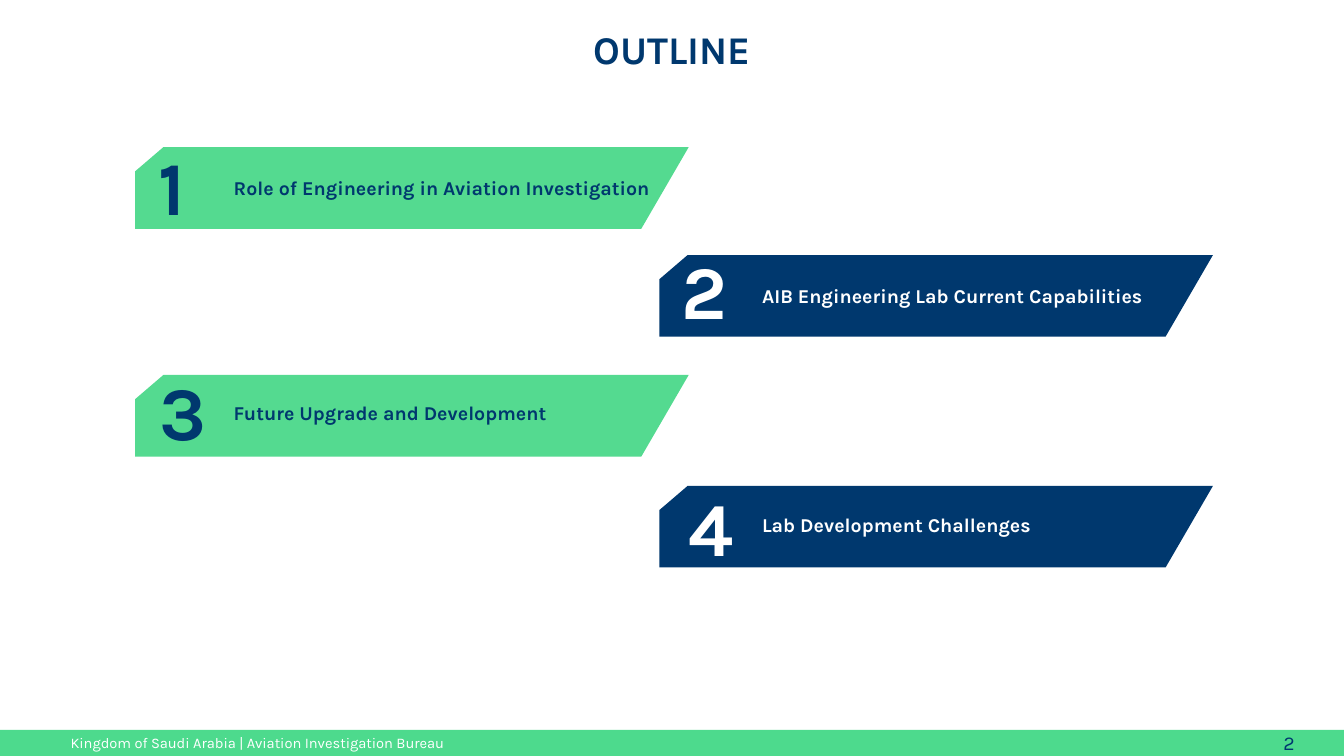
import pptx
import pptx.util
import pptx.dml.color
import pptx.enum.shapes
import pptx.enum.text
import lxml.etree
from pptx.util import Inches

RGBColor = pptx.dml.color.RGBColor
NAVY = RGBColor(0x00, 0x38, 0x6E)
PAGE_NAVY = RGBColor(0x00, 0x37, 0x70)
GREEN = RGBColor(0x54, 0xDA, 0x90)
FOOTER_GREEN = RGBColor(0x4D, 0xDA, 0x8D)
WHITE = RGBColor(0xFF, 0xFF, 0xFF)
FONT = "Karla"
ALIGN = pptx.enum.text.PP_ALIGN
ANCHOR = pptx.enum.text.MSO_ANCHOR

TITLE = "OUTLINE"
FOOTER = "Kingdom of Saudi Arabia | Aviation Investigation Bureau"
PAGE_NUMBER = "2"
COLUMNS = [
    {"left": 1.34, "label_left": 2.22, "fill": GREEN, "ink": NAVY},
    {"left": 6.54, "label_left": 7.46, "fill": NAVY, "ink": WHITE},
]
TOPICS = [
    ("Role of Engineering in Aviation Investigation", 1.46, 1.72, (1.47, 1.44)),
    ("AIB Engineering Lab Current Capabilities", 2.53, 2.79, (6.66, 2.47)),
    ("Future Upgrade and Development", 3.72, 3.95, (1.48, 3.67)),
    ("Lab Development Challenges", 4.82, 5.07, (6.73, 4.82)),
]
BANNER_OUTLINE = [(0.28, 0), (0, 0.24), (0, 0.81), (5.02, 0.81), (5.49, 0)]


def style_text(frame, size, color, bold=False, align=ALIGN.LEFT, spacing=1.0):
    frame.word_wrap = True
    paragraph = frame.paragraphs[0]
    paragraph.alignment = align
    paragraph.line_spacing = spacing
    paragraph.font.name = FONT
    paragraph.font.size = pptx.util.Pt(size)
    paragraph.font.bold = bold
    paragraph.font.color.rgb = color


def add_text(slide, text, left, top, width, height, size, color):
    frame = slide.shapes.add_textbox(
        Inches(left), Inches(top), Inches(width), Inches(height)).text_frame
    frame.text = text
    style_text(frame, size, color, bold=True, spacing=0.9)


def paint(shape, color):
    shape.shadow.inherit = False
    shape.fill.solid()
    shape.fill.fore_color.rgb = color
    shape.line.fill.background()


def add_banner(slide, left, top, color):
    points = [(Inches(left + x), Inches(top + y)) for x, y in BANNER_OUTLINE]
    builder = slide.shapes.build_freeform(*points[0])
    builder.add_line_segments(points[1:], close=True)
    paint(builder.convert_to_shape(), color)


def add_footer(slide):
    bar = slide.shapes.add_shape(
        pptx.enum.shapes.MSO_SHAPE.RECTANGLE,
        Inches(0), Inches(7.24), Inches(13.33), Inches(0.26))
    paint(bar, FOOTER_GREEN)
    frame = bar.text_frame
    frame.text = FOOTER
    frame.margin_left = Inches(0.7)
    frame.vertical_anchor = ANCHOR.MIDDLE
    style_text(frame, 10.5, WHITE)


def add_page_number(slide):
    frame = slide.shapes.add_textbox(
        Inches(12.44), Inches(7.2), Inches(0.5), Inches(0.34)).text_frame
    frame.text = PAGE_NUMBER
    style_text(frame, 14, PAGE_NAVY, align=ALIGN.RIGHT)


def add_title(slide):
    title = slide.shapes.title
    title.left, title.top = Inches(4.44), Inches(0.2)
    title.width, title.height = Inches(4.45), Inches(0.57)
    frame = title.text_frame
    frame.text = TITLE
    frame.auto_size = pptx.enum.text.MSO_AUTO_SIZE.NONE
    frame.vertical_anchor = ANCHOR.TOP
    style_text(frame, 28, NAVY, bold=True, align=ALIGN.CENTER)


def main():
    presentation = pptx.Presentation()
    presentation.slide_width = Inches(13.33)
    presentation.slide_height = Inches(7.5)
    slide = presentation.slides.add_slide(presentation.slide_layouts[5])

    add_title(slide)
    add_footer(slide)
    add_page_number(slide)
    for index, (label, top, label_top, number_place) in enumerate(TOPICS):
        column = COLUMNS[index % 2]
        add_banner(slide, column["left"], top, column["fill"])
        add_text(slide, str(index + 1), *number_place, 0.88, 0.9, 54, column["ink"])
        add_text(slide, label, column["label_left"], label_top, 4.74, 0.3, 14, column["ink"])

    presentation.save("out.pptx")


if __name__ == "__main__":
    main()
